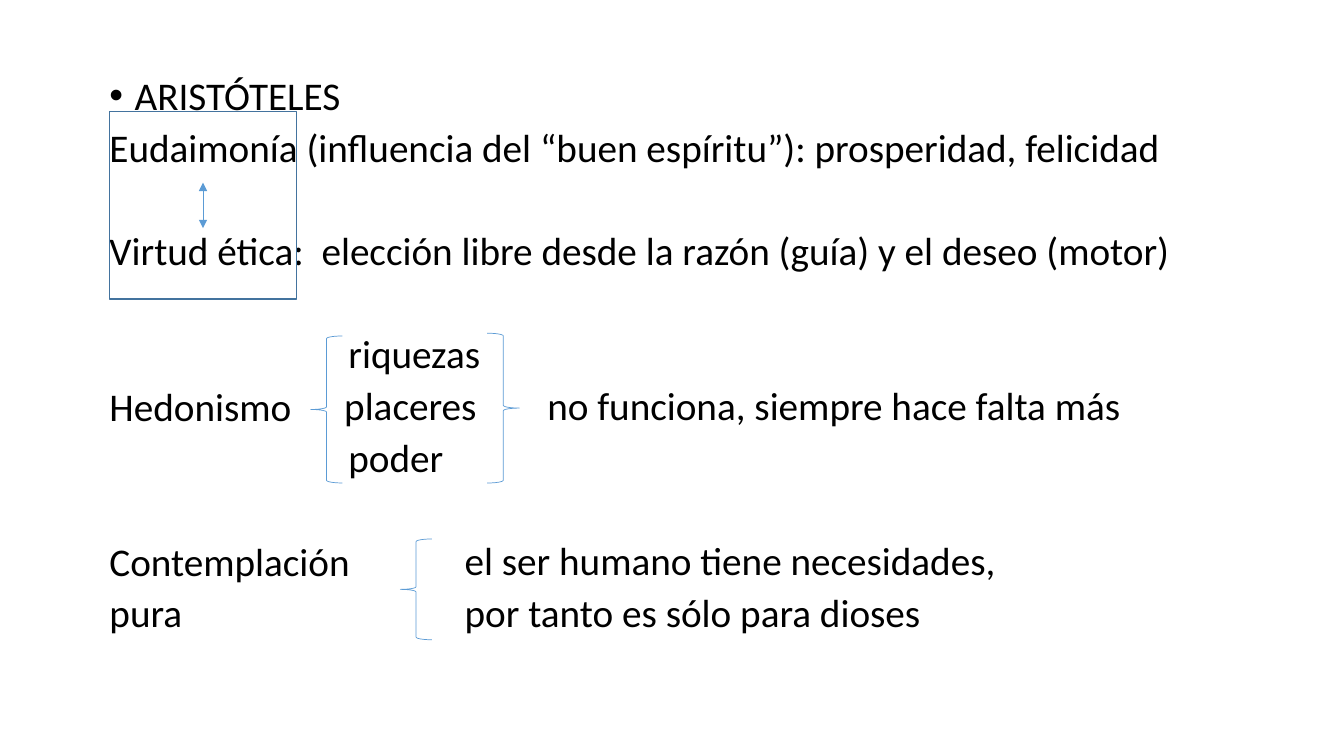
"""Build the slide on Aristotle: eudaimonia, virtue, hedonism and contemplation."""
import pptx
import pptx.util
import pptx.dml.color
import pptx.enum.shapes
import pptx.enum.text
import pptx.oxml.ns
import lxml.etree

Pt = pptx.util.Pt
SHAPE = pptx.enum.shapes.MSO_SHAPE
COLOURS = {"text": "000000", "accent": "5B9BD5", "frame": "43739E"}
TOP, PITCH, INSET = 54, 36.9, 7.2
GAP, WIDE_GAP = 10, 47


def colour(name):
    return pptx.dml.color.RGBColor.from_string(COLOURS[name])


def write_lines(box, lines):
    frame = box.text_frame
    frame.word_wrap = True
    frame.auto_size = pptx.enum.text.MSO_AUTO_SIZE.NONE
    frame.vertical_anchor = pptx.enum.text.MSO_ANCHOR.TOP
    for index, (spans, space, margin, bullet) in enumerate(lines):
        para = frame.paragraphs[0] if index == 0 else frame.add_paragraph()
        para.line_spacing = 0.8
        para.space_before = Pt(space)
        properties = para._p.get_or_add_pPr()
        properties.set("marL", str(Pt(margin)))
        properties.set("indent", str(Pt(-margin if bullet else 0)))
        if bullet:
            font = lxml.etree.SubElement(properties, pptx.oxml.ns.qn("a:buFont"))
            font.set("typeface", "Arial")
            mark = lxml.etree.SubElement(properties, pptx.oxml.ns.qn("a:buChar"))
            mark.set("char", bullet)
        else:
            lxml.etree.SubElement(properties, pptx.oxml.ns.qn("a:buNone"))
        for text, tracking in spans:
            span = para.add_run()
            span.text = text
            span.font.name = "Calibri"
            span.font.size = Pt(28)
            span.font.color.rgb = colour("text")
            if tracking:
                span.font._element.set("spc", str(tracking))


deck = pptx.Presentation()
deck.slide_width, deck.slide_height = Pt(960), Pt(540)
slide = deck.slides.add_slide(deck.slide_layouts[1])
title = slide.shapes.title.element
title.getparent().remove(title)

body = slide.placeholders[1]
body.left, body.top, body.width, body.height = Pt(71), Pt(TOP), Pt(828), Pt(425.5)
write_lines(body, [
    ([("ARISTÓTELES", 0)], 0, 18, "•"),
    ([("Eudaimonía (influencia del “buen espíritu”): prosperidad, felicidad", 0)], GAP, 0, None),
    ([("Virtud ética:", 0), (" ", 630),
      ("elección libre desde la razón (guía) y el deseo (motor)", 0)], WIDE_GAP, 0, None),
    ([("Hedonismo", 0)], WIDE_GAP + 2 * PITCH - PITCH, 0, None),
    ([("Contemplación", 0)], WIDE_GAP + PITCH, 0, None),
    ([("pura", 0)], GAP, 0, None),
])

columns = [
    (5, 246, 120, [("riquezas", 3), ("placeres", 0), ("poder", 3)]),
    (6, 391, 450, [("no funciona, siempre hace falta más", 0)]),
    (9, 332, 450, [("el ser humano tiene necesidades,", 0), ("por tanto es sólo para dioses", 0)]),
]
for row, left, width, entries in columns:
    column = slide.shapes.add_textbox(
        Pt(left - INSET), Pt(TOP + row * PITCH), Pt(width), Pt(len(entries) * PITCH))
    write_lines(column, [
        ([(text, 0)], GAP if index else 0, margin, None)
        for index, (text, margin) in enumerate(entries)])

outlines = [
    (SHAPE.LEFT_BRACE, 222, 240, 22.5, 105, "accent", 0.5),
    (SHAPE.RIGHT_BRACE, 348, 238, 23, 107, "accent", 0.5),
    (SHAPE.LEFT_BRACE, 286, 385, 22.5, 72, "accent", 0.5),
    (SHAPE.RECTANGLE, 78, 79.5, 134, 134, "frame", 1),
]
for preset, left, top, width, height, line_colour, weight in outlines:
    outline = slide.shapes.add_shape(preset, Pt(left), Pt(top), Pt(width), Pt(height))
    outline.shadow.inherit = False
    outline.fill.background()
    outline.line.color.rgb = colour(line_colour)
    outline.line.width = Pt(weight)

arrow = slide.shapes.add_connector(
    pptx.enum.shapes.MSO_CONNECTOR.STRAIGHT, Pt(145), Pt(130.5), Pt(145), Pt(163))
arrow.line.color.rgb = colour("accent")
arrow.line.width = Pt(0.5)
stroke = arrow.line._get_or_add_ln()
for end in ("a:headEnd", "a:tailEnd"):
    lxml.etree.SubElement(stroke, pptx.oxml.ns.qn(end)).set("type", "triangle")
lxml.etree.SubElement(arrow._element.spPr, pptx.oxml.ns.qn("a:effectLst"))

deck.save("out.pptx")
